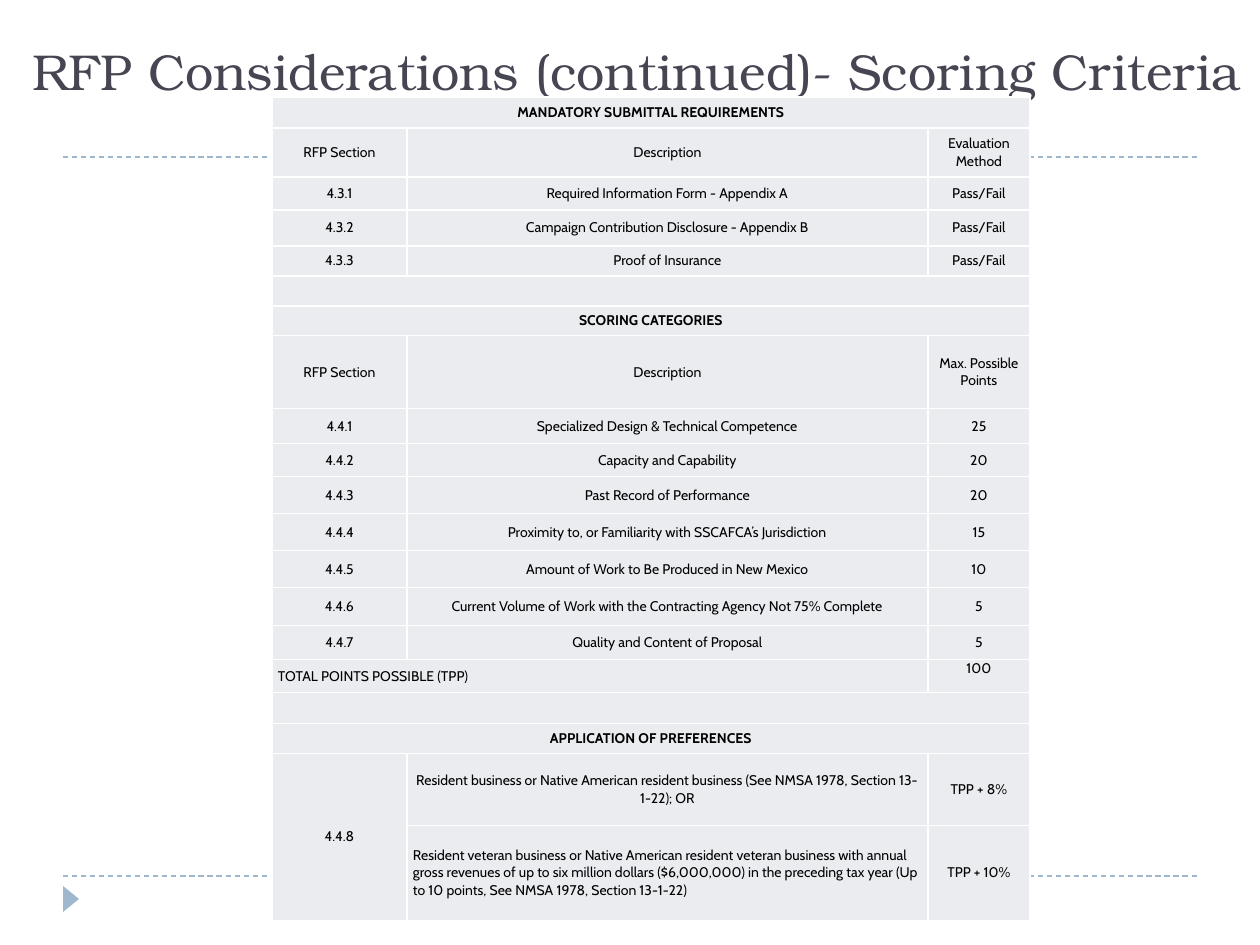
import pptx
import pptx.util
import pptx.dml.color
import pptx.enum.dml
import pptx.enum.shapes
import pptx.enum.text
import pptx.oxml.ns
import lxml.etree

RGB = pptx.dml.color.RGBColor
INK = RGB(0x46, 0x46, 0x53)
BLACK = RGB(0, 0, 0)
WHITE = RGB(0xFF, 0xFF, 0xFF)
PALE = RGB(0xEB, 0xEC, 0xF0)
BLUE = RGB(0x9F, 0xB8, 0xCD)
HEAD, BODY = "TeX Gyre Bonum", "Cabin"

ALIGN = pptx.enum.text.PP_ALIGN
ANCHOR = pptx.enum.text.MSO_ANCHOR

TITLE = "RFP Considerations (continued)- Scoring Criteria"
COLS = [135, 521, 102]
# Height, then the texts: one text fills the whole row, None joins a neighbour.
ROWS = [
    (31, ["MANDATORY SUBMITTAL REQUIREMENTS"]),
    (49, ["RFP Section", "Description", "Evaluation Method"]),
    (33, ["4.3.1", "Required Information Form - Appendix A", "Pass/Fail"]),
    (36, ["4.3.2", "Campaign Contribution Disclosure - Appendix B", "Pass/Fail"]),
    (30, ["4.3.3", "Proof of Insurance", "Pass/Fail"]),
    (30, [""]),
    (30, ["SCORING CATEGORIES"]),
    (73, ["RFP Section", "Description", "Max. Possible Points"]),
    (35, ["4.4.1", "Specialized Design & Technical Competence", "25"]),
    (33, ["4.4.2", "Capacity and Capability", "20"]),
    (37, ["4.4.3", "Past Record of Performance", "20"]),
    (37, ["4.4.4", "Proximity to, or Familiarity with SSCAFCA’s Jurisdiction", "15"]),
    (37, ["4.4.5", "Amount of Work to Be Produced in New Mexico", "10"]),
    (38, ["4.4.6", "Current Volume of Work with the Contracting Agency "
          "Not 75% Complete", "5"]),
    (34, ["4.4.7", "Quality and Content of Proposal", "5"]),
    (33, ["TOTAL POINTS POSSIBLE (TPP)", None, "100"]),
    (31, [""]),
    (30, ["APPLICATION OF PREFERENCES"]),
    (72, ["4.4.8", "Resident business or Native American resident business "
          "(See NMSA 1978, Section 13-1-22); OR", "TPP + 8%"]),
    (95, [None, "Resident veteran business or Native American resident veteran "
          "business with annual gross revenues of up to six million dollars "
          "($6,000,000) in the preceding tax year (Up to 10 points, See NMSA "
          "1978, Section 13-1-22)", "TPP + 10%"]),
]
TOTAL, LAST = 15, len(ROWS) - 1
LEFT = {(TOTAL, 0), (LAST, 1)}
TOP = {(TOTAL, 2)}
JOINS = [((TOTAL, 0), (TOTAL, 1)), ((LAST - 1, 0), (LAST, 0))]
JOINS += [((r, 0), (r, 2)) for r, (_, texts) in enumerate(ROWS) if len(texts) == 1]


def px(n):
    return pptx.util.Emu(round(n * 914400 / 126))


def put(frame, text, size=8, font=BODY, color=BLACK, bold=False, align=ALIGN.CENTER):
    para = frame.paragraphs[0]
    para.alignment = align
    if not text:  # an empty line takes its height from the end mark
        end = lxml.etree.SubElement(para._p, pptx.oxml.ns.qn("a:endParaRPr"))
        end.set("sz", str(size * 100))
        return
    run = para.add_run()
    run.text = text
    run.font.size = pptx.util.Pt(size)
    run.font.name = font
    run.font.bold = bold
    run.font.color.rgb = color


def edge(cell):
    """Give the cell four white borders, which must come before its fill."""
    props = cell._tc.get_or_add_tcPr()
    qn = pptx.oxml.ns.qn
    for i, side in enumerate("LRTB"):
        line = lxml.etree.Element(qn("a:ln" + side), w="12700")
        fill = lxml.etree.SubElement(line, qn("a:solidFill"))
        lxml.etree.SubElement(fill, qn("a:srgbClr"), val=str(WHITE))
        props.insert(i, line)


def rule(slide, y):
    line = slide.shapes.add_connector(
        pptx.enum.shapes.MSO_CONNECTOR.STRAIGHT, px(63), px(y), px(1197), px(y))
    line.line.color.rgb = BLUE
    line.line.width = pptx.util.Pt(0.75)
    line.line.dash_style = pptx.enum.dml.MSO_LINE.DASH
    lxml.etree.SubElement(line._element.spPr, pptx.oxml.ns.qn("a:effectLst"))


def mark(slide):
    tri = slide.shapes.add_shape(
        pptx.enum.shapes.MSO_SHAPE.ISOSCELES_TRIANGLE, px(58), px(891), px(26), px(16))
    tri.rotation = 90
    tri.shadow.inherit = False
    tri.fill.solid()
    tri.fill.fore_color.rgb = BLUE
    tri.line.fill.background()


def title(slide):
    frame = slide.shapes.add_textbox(px(20), px(23), px(1263), px(84)).text_frame
    frame.word_wrap = True
    frame.vertical_anchor = ANCHOR.BOTTOM
    put(frame, TITLE, size=28.8, font=HEAD, color=INK, align=ALIGN.LEFT)


def grid(slide):
    high = sum(h for h, _ in ROWS)
    table = slide.shapes.add_table(
        len(ROWS), len(COLS), px(272), px(97), px(sum(COLS)), px(high)).table
    table.first_row = table.horz_banding = False
    for col, width in zip(table.columns, COLS):
        col.width = px(width)
    for r, (height, texts) in enumerate(ROWS):
        table.rows[r].height = px(height)
        for c in range(len(COLS)):
            cell = table.cell(r, c)
            cell.fill.solid()
            cell.fill.fore_color.rgb = PALE
            edge(cell)
            cell.margin_left = cell.margin_right = px(6)
            cell.margin_top = cell.margin_bottom = 0
            cell.vertical_anchor = ANCHOR.TOP if (r, c) in TOP else ANCHOR.MIDDLE
            put(cell.text_frame, texts[c] if c < len(texts) else None,
                bold=len(texts) == 1,
                align=ALIGN.LEFT if (r, c) in LEFT else ALIGN.CENTER)
    for first, last in JOINS:
        table.cell(*first).merge(table.cell(*last))


def main():
    deck = pptx.Presentation()
    deck.slide_width, deck.slide_height = px(1260), px(945)
    slide = deck.slides.add_slide(deck.slide_layouts[6])
    for y in (876, 157):
        rule(slide, y)
    mark(slide)
    title(slide)
    grid(slide)
    deck.save("out.pptx")


if __name__ == "__main__":
    main()
